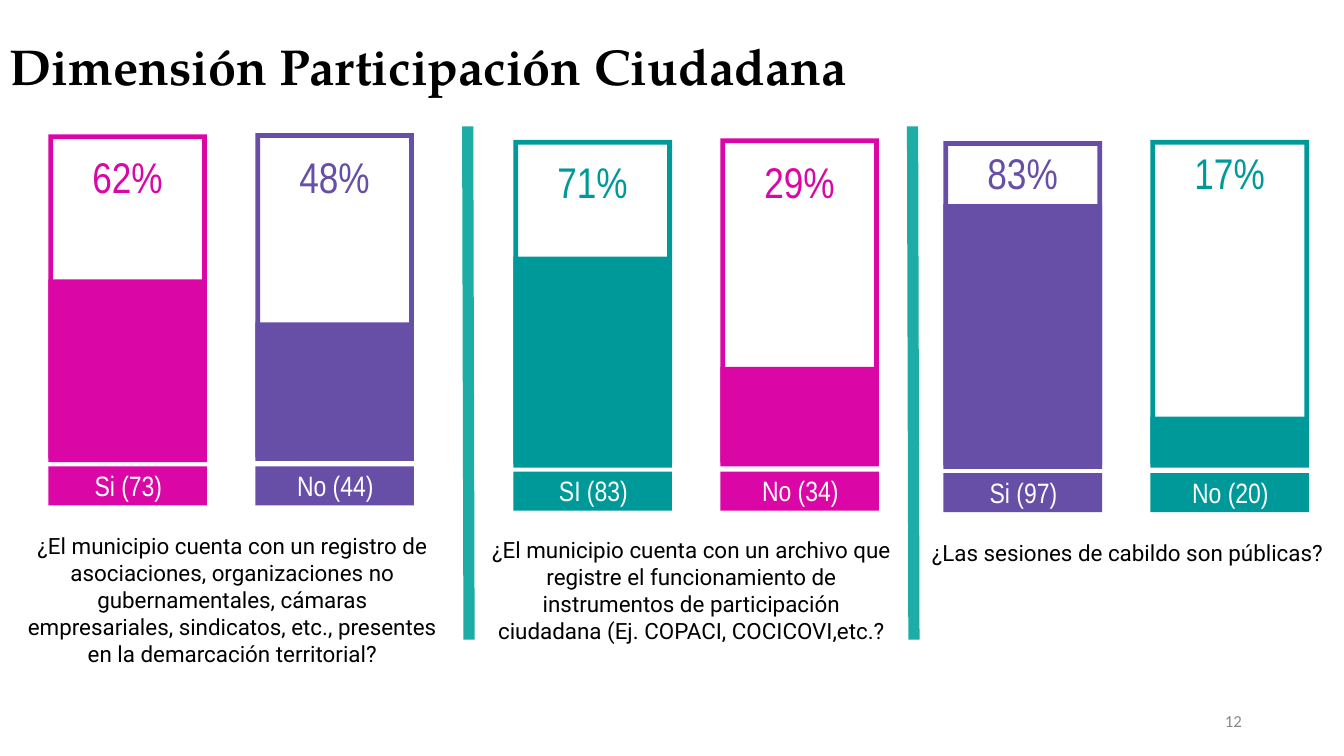
import pptx
import pptx.util
import pptx.dml.color
import pptx.enum.shapes
import pptx.enum.text
import pptx.oxml.ns
from lxml import etree

Inches = pptx.util.Inches
SHAPE = pptx.enum.shapes.MSO_SHAPE
ALIGN = pptx.enum.text.PP_ALIGN
ANCHOR = pptx.enum.text.MSO_ANCHOR

MAGENTA, PURPLE, TEAL = "DB06A6", "674EA7", "009999"
BAR_W, BAR_H, BAR_STEP = 1.18, 2.41, 1.54


def rgb(value):
    return pptx.dml.color.RGBColor.from_string(value)


def write(s, text, size, font, color="000000", bold=False,
          align=ALIGN.CENTER, anchor=ANCHOR.MIDDLE, inset=0.07):
    tf = s.text_frame
    tf.word_wrap = True
    tf.auto_size = pptx.enum.text.MSO_AUTO_SIZE.NONE
    tf.vertical_anchor = anchor
    tf.margin_left = tf.margin_right = Inches(0.07)
    tf.margin_top = tf.margin_bottom = Inches(inset)
    p = tf.paragraphs[0]
    p.alignment = align
    r = p.add_run()
    r.text = text
    r.font.size = pptx.util.Pt(size)
    r.font.name = font
    r.font.bold = bold
    r.font.color.rgb = rgb(color)


prs = pptx.Presentation()
prs.slide_width = Inches(10)
prs.slide_height = prs.slide_width * 9 // 16
slide = prs.slides.add_slide(prs.slide_layouts[5])

title = slide.shapes.title
title.left, title.top = Inches(0), Inches(0.19)
title.width, title.height = Inches(6.8), Inches(0.61)
write(title, "Dimensión Participación Ciudadana", 27, "TeX Gyre Pagella",
      bold=True, align=ALIGN.JUSTIFY, anchor=ANCHOR.TOP)

number = slide.shapes.add_textbox(Inches(7.06), Inches(5.21), Inches(2.25), Inches(0.3))
write(number, "12", 9, "Calibri", "888888", align=ALIGN.RIGHT, inset=0.04)

for x in (3.48, 6.79):
    divider = slide.shapes.add_connector(
        pptx.enum.shapes.MSO_CONNECTOR.STRAIGHT,
        Inches(x), Inches(0.94), Inches(x + 0.01), Inches(4.76))
    divider.line.color.rgb = rgb("1DADA6")
    divider.line.width = pptx.util.Pt(6)
    etree.SubElement(divider._element.spPr, pptx.oxml.ns.qn("a:effectLst"))

# Panel: left, top, top of percentages, bars, question, question box (left, top, width)
# Bar: percentage, label, colour, height of the solid part
panels = [
    (0.36, 1.0, 1.08,
     [("62%", "Si (73)", MAGENTA, 1.36), ("48%", "No (44)", PURPLE, 1.03)],
     "¿El municipio cuenta con un registro de asociaciones, organizaciones no "
     "gubernamentales, cámaras empresariales, sindicatos, etc., presentes "
     "en la demarcación territorial?", (0.13, 3.89, 3.2)),
    (3.82, 1.04, 1.12,
     [("71%", "SI (83)", TEAL, 1.57), ("29%", "No (34)", MAGENTA, 0.74)],
     "¿El municipio cuenta con un archivo que registre el funcionamiento de "
     "instrumentos de participación ciudadana (Ej. COPACI, COCICOVI,etc.?",
     (3.57, 3.92, 3.15)),
    (7.02, 1.05, 1.05,
     [("83%", "Si (97)", PURPLE, 1.97), ("17%", "No (20)", TEAL, 0.38)],
     "¿Las sesiones de cabildo son públicas?", (6.79, 3.94, 3.2)),
]

for left, top, percent_top, bars, question, (qx, qy, qw) in panels:
    group = slide.shapes.add_group_shape()
    for i, (percent, label, color, solid_h) in enumerate(bars):
        x = left + i * BAR_STEP
        bar_top = top - i * 0.01
        solid_bottom = bar_top + BAR_H + 0.03
        label_top = top + 2.47
        for kind, y, h in ((SHAPE.FRAME, bar_top, BAR_H),
                           (SHAPE.RECTANGLE, solid_bottom - solid_h, solid_h),
                           (SHAPE.RECTANGLE, label_top, 0.29)):
            s = group.shapes.add_shape(kind, Inches(x), Inches(y), Inches(BAR_W), Inches(h))
            s.shadow.inherit = False
            s.fill.solid()
            s.fill.fore_color.rgb = rgb(color)
            s.line.fill.background()
            if kind == SHAPE.FRAME:
                s.adjustments[0] = 0.03
        s = group.shapes.add_textbox(Inches(x + 0.11), Inches(percent_top),
                                     Inches(0.96), Inches(0.46))
        write(s, percent, 23, "Arial Narrow", color)
        s = group.shapes.add_textbox(Inches(x + 0.05), Inches(label_top + 0.03),
                                     Inches(1.09), Inches(0.22))
        write(s, label, 15, "Arial Narrow", "FFFFFF")

    s = slide.shapes.add_textbox(Inches(qx), Inches(qy), Inches(qw), Inches(0.74))
    write(s, question, 12, "Roboto", anchor=ANCHOR.TOP)

prs.save("out.pptx")
